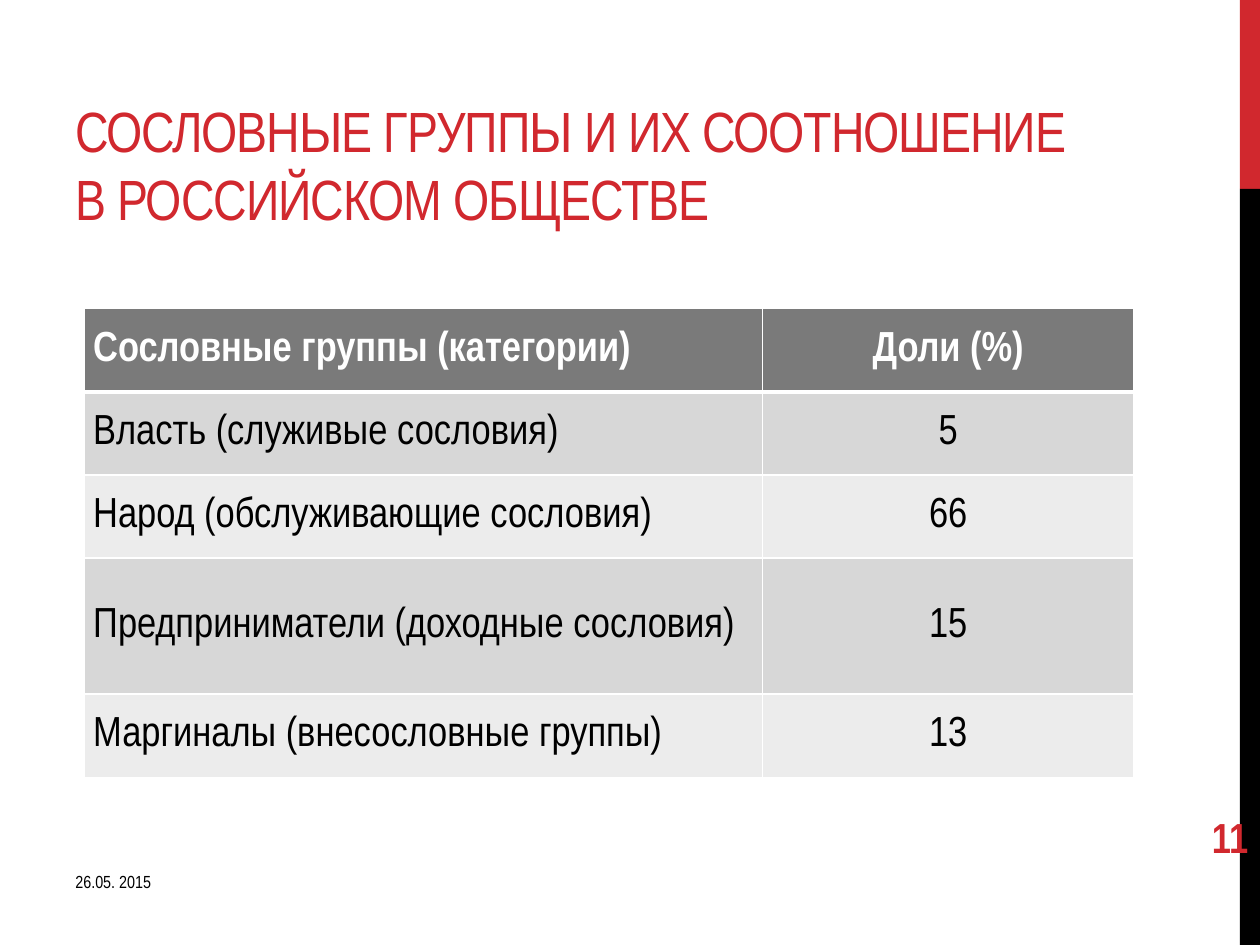
from lxml.etree import SubElement
from pptx import Presentation
from pptx.dml.color import RGBColor
from pptx.enum.shapes import MSO_SHAPE as Shape
from pptx.enum.text import MSO_ANCHOR as Anchor, PP_ALIGN as Align
from pptx.oxml.ns import qn
from pptx.util import Inches, Pt

RED, BLACK, WHITE = "D1282E", "000000", "FFFFFF"
HEAD, BANDS = "7A7A7A", ("D7D7D7", "ECECEC")
TITLE = "СОСЛОВНЫЕ ГРУППЫ И ИХ СООТНОШЕНИЕ В РОССИЙСКОМ ОБЩЕСТВЕ"
ROWS = [
    ("Сословные группы (категории)", "Доли (%)"),
    ("Власть (служивые сословия)", "5"),
    ("Народ (обслуживающие сословия)", "66"),
    ("Предприниматели (доходные сословия)", "15"),
    ("Маргиналы (внесословные группы)", "13"),
]
COLS = (5.38, 2.95)
HEIGHTS = (0.66, 0.66, 0.66, 1.08, 0.66)


def color(code):
    return RGBColor.from_string(code)


def apply(item, form):
    for name, value in form.items():
        setattr(item, name, value)


def write(frame, text, size, code, bold=False):
    run = frame.paragraphs[0].add_run()
    run.text = text
    apply(run.font, {"name": "Arial Narrow", "size": Pt(size), "bold": bold})
    run.font.color.rgb = color(code)
    return run


def add_text(slide, box, text, size, code, anchor, bold=False, **form):
    shape = slide.shapes.add_textbox(*map(Inches, box))
    apply(shape.text_frame, {"word_wrap": True, "vertical_anchor": anchor, **form})
    run = write(shape.text_frame, text, size, code, bold)
    return shape, run


def add_title(slide, box):
    _, run = add_text(slide, box, TITLE, 32.4, RED, Anchor.BOTTOM)
    run.font._element.set("spc", "-60")


def add_stripe(slide, box):
    """Side stripe: the top fifth red, the rest black."""
    left, top, width, height = box
    cut = height / 5
    for y, tall, code in ((top, cut, RED), (top + cut, height - cut, BLACK)):
        bar = slide.shapes.add_shape(Shape.RECTANGLE, *map(Inches, (left, y, width, tall)))
        bar.shadow.inherit = False
        bar.fill.solid()
        bar.fill.fore_color.rgb = color(code)
        bar.line.fill.background()


def add_edges(cell, widths):
    """Draw white cell borders; the lines must come before the fill."""
    props = cell._tc.get_or_add_tcPr()
    for side, width in widths.items():
        line = SubElement(props, qn(f"a:ln{side}"), w=str(Pt(width)))
        fill = SubElement(line, qn("a:solidFill"))
        SubElement(fill, qn("a:srgbClr"), val=WHITE)


def add_shares(slide, box):
    table = slide.shapes.add_table(len(ROWS), len(COLS), *map(Inches, box)).table
    for col, width in zip(table.columns, COLS):
        col.width = Inches(width)
    for i, (row, height) in enumerate(zip(table.rows, HEIGHTS)):
        row.height = Inches(height)
        head = i == 0
        for j, cell in enumerate(row.cells):
            apply(cell, {
                "vertical_anchor": Anchor.MIDDLE,
                "margin_left": Inches(0.07), "margin_right": Inches(0.07),
                "margin_top": 0, "margin_bottom": 0,
            })
            add_edges(cell, {"L": 1, "R": 1, "T": 3 if i == 1 else 1, "B": 3 if head else 1})
            cell.fill.solid()
            cell.fill.fore_color.rgb = color(HEAD if head else BANDS[(i - 1) % 2])
            write(cell.text_frame, ROWS[i][j], 24, WHITE if head else BLACK, head)
            cell.text_frame.paragraphs[0].alignment = Align.CENTER if j else Align.LEFT


def add_number(slide, box):
    """Page number: the turned box and its vertical text cancel out."""
    shape, _ = add_text(slide, box, "11", 24, RED, Anchor.MIDDLE, True, margin_bottom=0)
    shape.rotation = 270
    shape.text_frame._txBody.bodyPr.set("vert", "vert")


def main():
    deck = Presentation()
    apply(deck, {"slide_width": Inches(10), "slide_height": Inches(7.5)})
    slide = deck.slides.add_slide(deck.slide_layouts[6])
    add_stripe(slide, (9.84, 0, 0.16, 7.5))
    add_title(slide, (0.5, 0.39, 8.12, 1.5))
    add_shares(slide, (0.67, 2.45, sum(COLS), sum(HEIGHTS)))
    add_text(slide, (0.5, 6.75, 3.75, 0.33), "26.05. 2015", 10, BLACK, Anchor.BOTTOM,
             margin_bottom=0)
    add_number(slide, (9, 6.44, 1.44, 0.4))
    deck.save("out.pptx")


if __name__ == "__main__":
    main()
